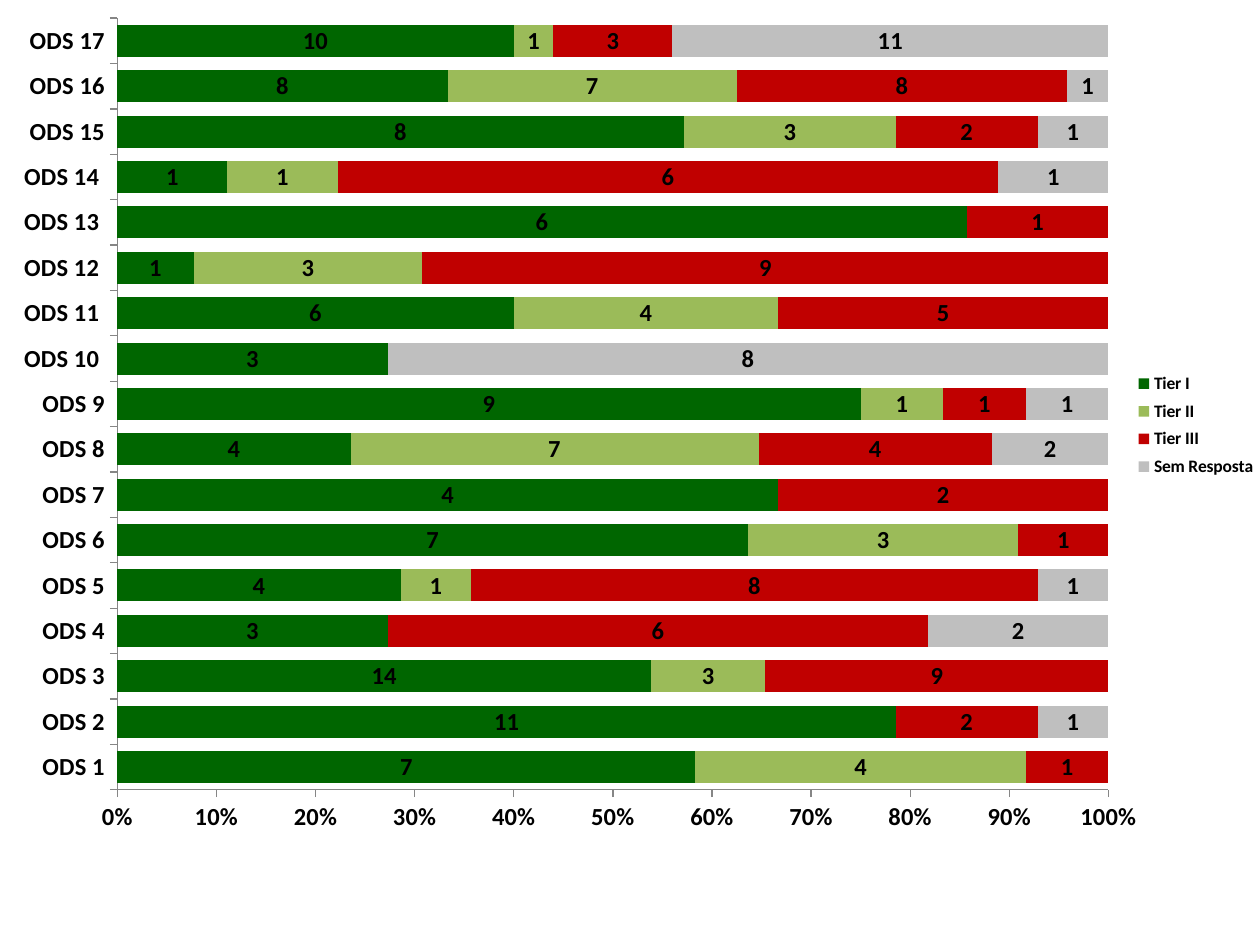
import pptx
import pptx.chart.data
import pptx.dml.color
import pptx.enum.chart
import pptx.oxml
import pptx.oxml.ns
import pptx.util

Pt = pptx.util.Pt
RGBColor = pptx.dml.color.RGBColor
xl = pptx.enum.chart

BLACK = RGBColor(0x00, 0x00, 0x00)
AXIS_GRAY = RGBColor(0x86, 0x86, 0x86)
GREEN = RGBColor(0x00, 0x66, 0x00)
LIME = RGBColor(0x9B, 0xBB, 0x59)
RED = RGBColor(0xC0, 0x00, 0x00)
SILVER = RGBColor(0xBF, 0xBF, 0xBF)

GOALS = [f"ODS {n} " if 10 <= n <= 14 else f"ODS {n}" for n in range(1, 18)]
TIERS = [
    ("Tier I ", GREEN, (7, 11, 14, 3, 4, 7, 4, 4, 9, 3, 6, 1, 6, 1, 8, 8, 10)),
    ("Tier II ", LIME, (4, 0, 3, 0, 1, 3, 0, 7, 1, 0, 4, 3, 0, 1, 3, 7, 1)),
    ("Tier III", RED, (1, 2, 9, 6, 8, 1, 2, 4, 1, 0, 5, 9, 1, 6, 2, 8, 3)),
    ("Sem Resposta  ", SILVER, (0, 1, 0, 2, 1, 0, 0, 2, 1, 8, 0, 0, 0, 1, 1, 1, 11)),
]


def style_font(font, size):
    font.name = "Calibri"
    font.size = Pt(size)
    font.bold = True
    font.color.rgb = BLACK


def style_axis(axis):
    axis.has_major_gridlines = False
    axis.major_tick_mark = xl.XL_TICK_MARK.OUTSIDE
    axis.minor_tick_mark = xl.XL_TICK_MARK.NONE
    axis.format.line.color.rgb = AXIS_GRAY
    style_font(axis.tick_labels.font, 14)


def style_series(series, color):
    series.format.fill.solid()
    series.format.fill.fore_color.rgb = color
    series.invert_if_negative = False
    labels = series.data_labels
    labels.show_value = True
    labels.number_format = "0;;;"
    labels.number_format_is_linked = False
    style_font(labels.font, 14)


def set_layout(parent, x, y, w, h, inner=False):
    qn = pptx.oxml.ns.qn
    for old in parent.findall(qn("c:layout")):
        parent.remove(old)
    target = '<c:layoutTarget val="inner"/>' if inner else ""
    sizes = "".join(f'<c:{tag} val="{v}"/>' for tag, v in zip("xywh", (x, y, w, h)))
    layout = pptx.oxml.parse_xml(
        f'<c:layout {pptx.oxml.ns.nsdecls("c")}><c:manualLayout>{target}'
        f'<c:xMode val="edge"/><c:yMode val="edge"/>{sizes}'
        "</c:manualLayout></c:layout>"
    )
    position = parent.find(qn("c:legendPos"))
    if position is None:
        parent.insert(0, layout)
    else:
        position.addnext(layout)


def add_tier_chart(slide):
    data = pptx.chart.data.CategoryChartData(number_format="0")
    data.categories = GOALS
    for name, _, values in TIERS:
        data.add_series(name, values)
    chart = slide.shapes.add_chart(
        xl.XL_CHART_TYPE.BAR_STACKED_100, Pt(0), Pt(0.72), Pt(745.2), Pt(484.56), data
    ).chart
    chart.has_title = False
    style_font(chart.font, 10)

    plot = chart.plots[0]
    plot.gap_width = 42
    plot.overlap = 100
    plot.vary_by_categories = False
    for series, (_, color, _) in zip(plot.series, TIERS):
        style_series(series, color)

    style_axis(chart.category_axis)
    style_axis(chart.value_axis)
    chart.value_axis.tick_labels.number_format = "0%"
    chart.value_axis.tick_labels.number_format_is_linked = False

    chart.has_legend = True
    legend = chart.legend
    legend.position = xl.XL_LEGEND_POSITION.RIGHT
    legend.include_in_layout = False
    style_font(legend.font, 10)
    plot_area = chart.element.find(".//" + pptx.oxml.ns.qn("c:plotArea"))
    legend_box = chart.element.find(".//" + pptx.oxml.ns.qn("c:legend"))
    set_layout(plot_area, 0.09, 0.02, 0.76, 0.91, inner=True)
    set_layout(legend_box, 0.87, 0.43, 0.1, 0.14)


def main():
    prs = pptx.Presentation()
    prs.slide_width, prs.slide_height = Pt(720), Pt(540)
    slide = prs.slides.add_slide(prs.slide_layouts[6])
    add_tier_chart(slide)
    prs.save("out.pptx")


if __name__ == "__main__":
    main()
